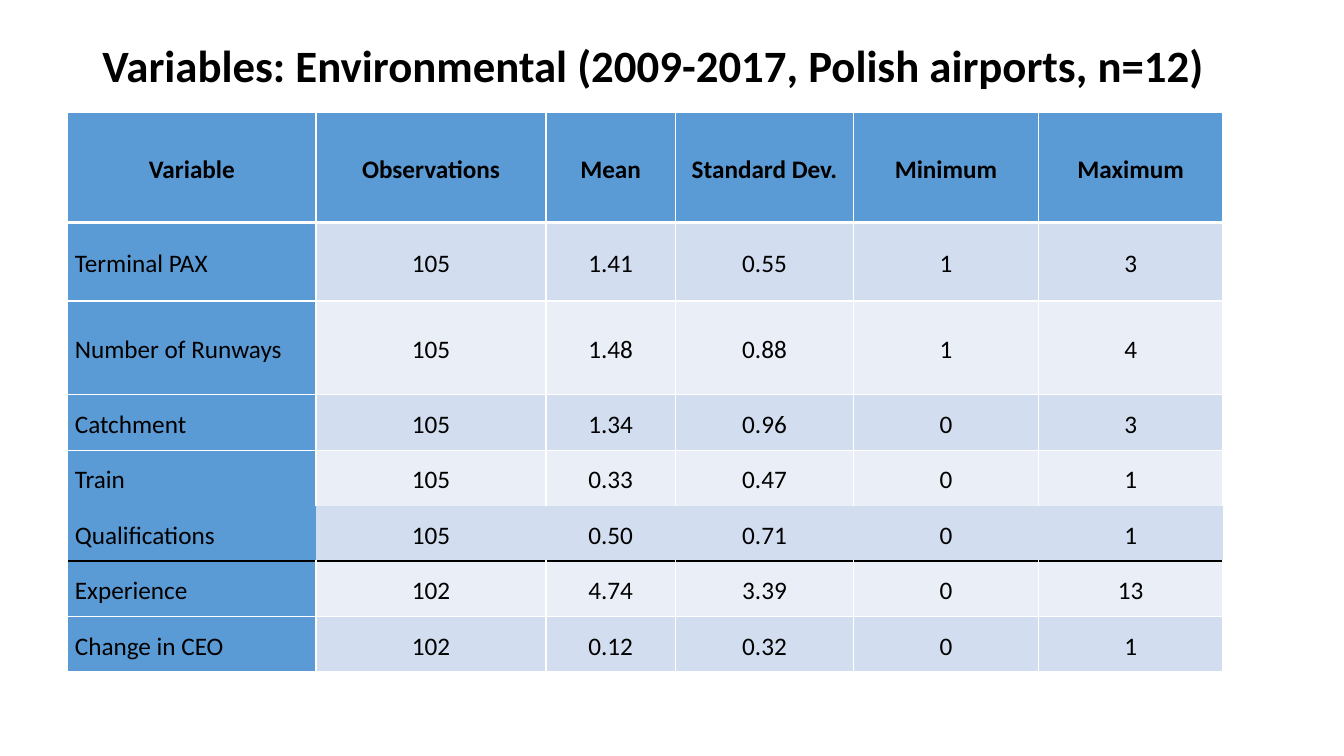
from dataclasses import dataclass
from typing import Optional

from lxml import etree
from pptx import Presentation
from pptx.dml.color import RGBColor
from pptx.enum.text import MSO_ANCHOR, MSO_AUTO_SIZE, PP_ALIGN
from pptx.oxml.ns import qn
from pptx.util import Pt

LEFT, CENTER = PP_ALIGN.LEFT, PP_ALIGN.CENTER
MIDDLE = MSO_ANCHOR.MIDDLE
NO_AUTOFIT = MSO_AUTO_SIZE.NONE
TITLE_ONLY = 5


@dataclass(frozen=True)
class Theme:
    font: str = "Calibri"
    title_size: int = 32
    cell_size: int = 18
    text: str = "000000"
    accent: str = "5B9BD5"
    bands: tuple[str, str] = ("D2DEEF", "EAEFF7")
    rule: str = "FFFFFF"


@dataclass(frozen=True)
class Edge:
    color: str
    width: float = 1


THEME = Theme()
THIN = Edge(THEME.rule)
THICK = Edge(THEME.rule, 3)
DARK = Edge(THEME.text)


@dataclass(frozen=True)
class VariableRow:
    values: tuple[str, ...]
    height: float = 39.6
    below: Optional[Edge] = THIN
    sides: Optional[Edge] = THIN


TITLE = "Variables: Environmental (2009-2017, Polish airports, n=12)"
COLUMN_WIDTHS = (177.2, 164.3, 92.4, 127.4, 131.9, 131.9)
ROWS = (
    VariableRow(("Variable", "Observations", "Mean", "Standard Dev.", "Minimum", "Maximum"),
                79, below=THICK),
    VariableRow(("Terminal PAX", "105", "1.41", "0.55", "1", "3"), 56),
    VariableRow(("Number of Runways", "105", "1.48", "0.88", "1", "4"), 67),
    VariableRow(("Catchment", "105", "1.34", "0.96", "0", "3")),
    VariableRow(("Train", "105", "0.33", "0.47", "0", "1"), below=None),
    VariableRow(("Qualifications", "105", "0.50", "0.71", "0", "1"), below=DARK, sides=None),
    VariableRow(("Experience", "102", "4.74", "3.39", "0", "13")),
    VariableRow(("Change in CEO", "102", "0.12", "0.32", "0", "1")),
)


def apply(target, values: dict) -> None:
    for name, value in values.items():
        setattr(target, name, value)


def write(paragraph, text: str, size: int, bold: bool, align, spacing: float) -> None:
    apply(paragraph, {"alignment": align, "line_spacing": spacing})
    run = paragraph.add_run()
    run.text = text
    apply(run.font, {"name": THEME.font, "size": Pt(size), "bold": bold})
    run.font.color.rgb = RGBColor.from_string(THEME.text)


def set_borders(cell, sides: Optional[Edge], above: Optional[Edge],
                below: Optional[Edge]) -> None:
    properties = cell._tc.get_or_add_tcPr()
    edges = {"a:lnL": sides, "a:lnR": sides, "a:lnT": above, "a:lnB": below}
    # Border lines come before the fill in the cell properties
    for position, (tag, edge) in enumerate(edges.items()):
        line = etree.Element(qn(tag), w=str(Pt(edge.width if edge else 0)))
        if edge:
            fill = etree.SubElement(line, qn("a:solidFill"))
            etree.SubElement(fill, qn("a:srgbClr"), val=edge.color)
        else:
            etree.SubElement(line, qn("a:noFill"))
        properties.insert(position, line)


def add_title(slide) -> None:
    title = slide.shapes.title
    apply(title, {"left": Pt(66), "top": Pt(16), "width": Pt(828), "height": Pt(65.5)})
    apply(title.text_frame, {"word_wrap": True, "auto_size": NO_AUTOFIT,
                             "vertical_anchor": MIDDLE})
    write(title.text_frame.paragraphs[0], TITLE, THEME.title_size, True, LEFT, 0.9)


def add_variables_table(slide) -> None:
    frame = slide.shapes.add_table(
        len(ROWS), len(COLUMN_WIDTHS), Pt(48.5), Pt(80),
        Pt(sum(COLUMN_WIDTHS)), Pt(sum(row.height for row in ROWS)))
    variables = frame.table
    for column, width in zip(variables.columns, COLUMN_WIDTHS):
        column.width = Pt(width)

    above: Optional[Edge] = THIN
    for r, row in enumerate(ROWS):
        variables.rows[r].height = Pt(row.height)
        is_header = r == 0
        for c, value in enumerate(row.values):
            is_label = c == 0
            cell = variables.cell(r, c)
            apply(cell, {"margin_left": Pt(5), "margin_right": Pt(5), "margin_top": 0,
                         "margin_bottom": 0, "vertical_anchor": MIDDLE})
            color = THEME.accent if is_header or is_label else THEME.bands[(r - 1) % 2]
            cell.fill.solid()
            cell.fill.fore_color.rgb = RGBColor.from_string(color)
            set_borders(cell, row.sides, above, row.below)
            align = LEFT if is_label and not is_header else CENTER
            write(cell.text_frame.paragraphs[0], value, THEME.cell_size, is_header, align, 1.15)
        above = row.below


def main() -> None:
    deck = Presentation()
    apply(deck, {"slide_width": Pt(960), "slide_height": Pt(540)})
    slide = deck.slides.add_slide(deck.slide_layouts[TITLE_ONLY])
    add_title(slide)
    add_variables_table(slide)
    deck.save("out.pptx")


if __name__ == "__main__":
    main()
